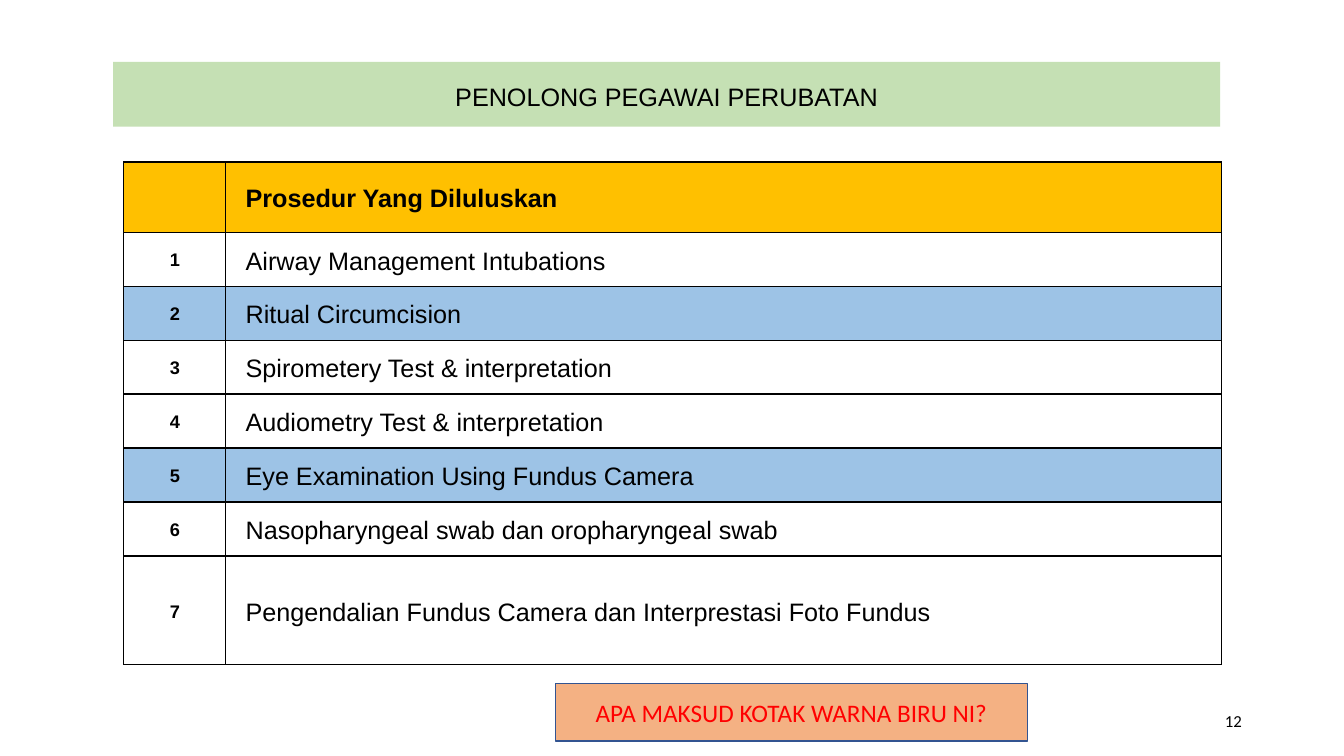
"""Build the slide of approved procedures for assistant medical officers."""
from lxml.etree import SubElement
from pptx import Presentation
from pptx.dml.color import RGBColor
from pptx.enum.shapes import MSO_SHAPE
from pptx.enum.text import MSO_ANCHOR, PP_ALIGN
from pptx.oxml.ns import qn
from pptx.util import Cm, Pt


def paint(fill, color):
    fill.solid()
    fill.fore_color.rgb = RGBColor.from_string(color)


def write(tf, text, size, font="Arial", color="000000", bold=False,
          align=PP_ALIGN.LEFT, spaced=True):
    tf.word_wrap = True
    p = tf.paragraphs[0]
    p.text = text
    p.alignment = align
    p.font.name, p.font.size, p.font.bold = font, Pt(size), bold
    p.font.color.rgb = RGBColor.from_string(color)
    if spaced:
        p.line_spacing = 1.15
        p.space_before = p.space_after = Pt(3)


prs = Presentation()
prs.slide_width, prs.slide_height = Cm(33.87), Cm(19.05)
s = prs.slides.add_slide(prs.slide_layouts[5])

title = s.shapes.title
title.left, title.top, title.width, title.height = Cm(2.85), Cm(1.56), Cm(27.9), Cm(1.63)
paint(title.fill, "C5E0B4")
title.text_frame.vertical_anchor = MSO_ANCHOR.MIDDLE
write(title.text_frame, "PENOLONG PEGAWAI PERUBATAN", 18, align=PP_ALIGN.CENTER)

procedures = [
    "Airway Management Intubations",
    "Ritual Circumcision",
    "Spirometery Test & interpretation",
    "Audiometry Test & interpretation",
    "Eye Examination Using Fundus Camera",
    "Nasopharyngeal swab dan oropharyngeal swab",
    "Pengendalian Fundus Camera dan Interprestasi Foto Fundus",
]
rows = [("", "Prosedur Yang Diluluskan")]
rows += [(str(n), name) for n, name in enumerate(procedures, 1)]
heights = [1.77] + [1.36] * 6 + [2.74]
fills = {0: "FFC000", 2: "9DC3E6", 5: "9DC3E6"}

table = s.shapes.add_table(len(rows), 2, Cm(3.12), Cm(4.08), Cm(27.66), Cm(sum(heights))).table
table.columns[0].width, table.columns[1].width = Cm(2.57), Cm(25.09)
for i, row in enumerate(rows):
    table.rows[i].height = Cm(heights[i])
    for j, text in enumerate(row):
        cell = table.cell(i, j)
        cell.vertical_anchor = MSO_ANCHOR.MIDDLE
        cell.margin_left, cell.margin_right = Cm(0.5 if j else 0.1), Cm(0.1)
        cell.margin_top = cell.margin_bottom = 0
        for side in ("a:lnL", "a:lnR", "a:lnT", "a:lnB"):
            ln = SubElement(cell._tc.get_or_add_tcPr(), qn(side), w=str(Pt(1)))
            SubElement(SubElement(ln, qn("a:solidFill")), qn("a:srgbClr"), val="000000")
        paint(cell.fill, fills.get(i, "FFFFFF"))
        write(cell.text_frame, text, 18 if j else 13, bold=i == 0 or j == 0,
              align=PP_ALIGN.LEFT if j else PP_ALIGN.CENTER)

number = s.shapes.add_textbox(Cm(23.93), Cm(17.65), Cm(7.62), Cm(1.02))
number.text_frame.vertical_anchor = MSO_ANCHOR.MIDDLE
write(number.text_frame, "12", 12, "Calibri", align=PP_ALIGN.RIGHT, spaced=False)

question = s.shapes.add_shape(MSO_SHAPE.RECTANGLE, Cm(14), Cm(17.22), Cm(11.89), Cm(1.45))
question.shadow.inherit = False
paint(question.fill, "F4B183")
paint(question.line.fill, "325491")
question.line.width = Pt(1)
question.text_frame.vertical_anchor = MSO_ANCHOR.MIDDLE
write(question.text_frame, "APA MAKSUD KOTAK WARNA BIRU NI?", 18, "Calibri", "FF0000",
      align=PP_ALIGN.CENTER, spaced=False)

prs.save("out.pptx")
